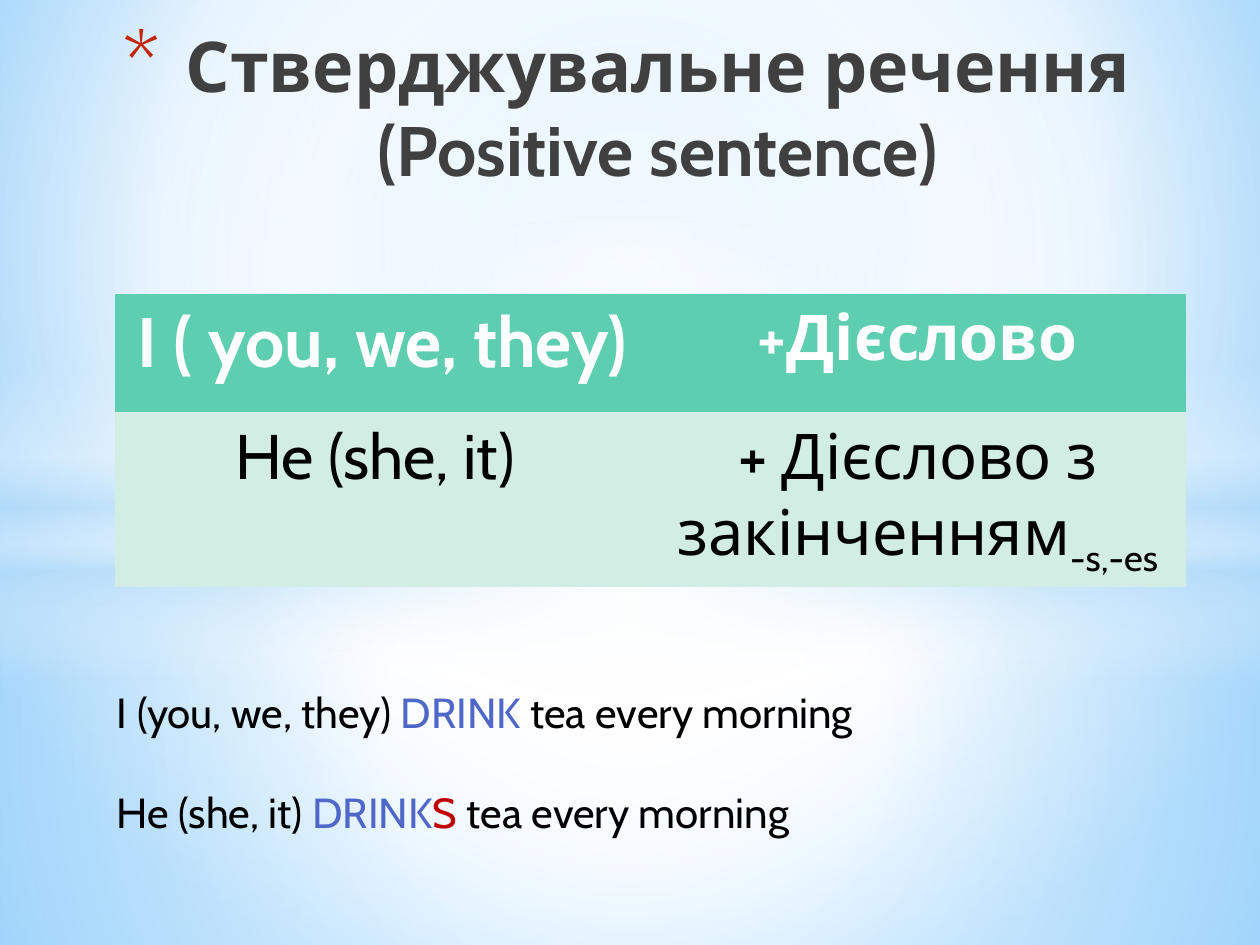
from lxml import etree
from pptx import Presentation
from pptx.dml.color import RGBColor
from pptx.enum.shapes import MSO_SHAPE
from pptx.enum.text import MSO_ANCHOR, MSO_AUTO_SIZE, PP_ALIGN
from pptx.oxml.ns import qn
from pptx.util import Inches, Pt

RECT, OVAL = MSO_SHAPE.RECTANGLE, MSO_SHAPE.OVAL
CENTER, LEFT = PP_ALIGN.CENTER, PP_ALIGN.LEFT
TOP = MSO_ANCHOR.TOP
NO_AUTOFIT = MSO_AUTO_SIZE.NONE
PLAIN_TABLE = "{2D5ABB26-0587-4C30-8999-92F81FD0307C}"
COLS, ROWS = 100, 75
FONT = "Cabin"
COLORS = {
    "white": "FFFFFF", "black": "000000", "grey": "404040", "navy": "212745",
    "sky": "9ED5FF", "deep sky": "5BB9FF", "haze": "B4DCFA",
    "bullet": "C3260C", "verb": "4E67C8", "ending": "C00000",
    "header": "5DCEAF", "row": "D2EDE3",
}


def rgb(name):
    return RGBColor.from_string(COLORS[name])


def child(parent, tag, **attrs):
    el = etree.SubElement(parent, qn(tag))
    for key, value in attrs.items():
        el.set(key, str(value))
    return el


def set_gradient(parent, stops, focus=None):
    """Swap a solid fill for a gradient: circular around focus, else vertical."""
    grad = etree.Element(qn("a:gradFill"), rotWithShape="1")
    gs_list = child(grad, "a:gsLst")
    for pos, color, alpha in stops:
        gs = child(gs_list, "a:gs", pos=pos * 1000)
        clr = child(gs, "a:srgbClr", val=COLORS[color])
        if alpha < 100:
            child(clr, "a:alpha", val=alpha * 1000)
    if focus:
        sides = {side: share * 1000 for side, share in zip("ltrb", focus)}
        child(child(grad, "a:path", path="circle"), "a:fillToRect", **sides)
    else:
        child(grad, "a:lin", ang=90 * 60000, scaled=0)
    parent.replace(parent.find(qn("a:solidFill")), grad)


def add_run(p, text, size=24, color="black", bold=False, baseline=0):
    r = p.add_run()
    r.text = text
    r.font.name, r.font.size, r.font.bold = FONT, Pt(size), bold
    r.font.fill.solid()
    r.font.fill.fore_color.rgb = rgb(color)
    if baseline:
        r.font._element.set("baseline", str(baseline * 1000))
    return r


class Deck:
    def __init__(self):
        self.prs = Presentation()
        self.prs.slide_width, self.prs.slide_height = Inches(10), Inches(7.5)
        self.slide = self.prs.slides.add_slide(self.prs.slide_layouts[0])
        subtitle = self.slide.placeholders[1]._element
        subtitle.getparent().remove(subtitle)

    def place(self, col, row, width, height):
        x, y = self.prs.slide_width / COLS, self.prs.slide_height / ROWS
        return [round(v) for v in (col * x, row * y, width * x, height * y)]

    def background(self, stops, focus):
        fill = self.slide.background.fill
        fill.solid()
        fill.fore_color.rgb = rgb("white")
        bg_pr = self.slide._element.find(".//" + qn("p:bgPr"))
        set_gradient(bg_pr, stops, focus)

    def glow(self, kind, box, stops, focus=None):
        sp = self.slide.shapes.add_shape(kind, *self.place(*box))
        sp.shadow.inherit = False
        sp.line.fill.background()
        sp.fill.solid()
        set_gradient(sp._element.spPr, stops, focus)

    def title(self, text, box, stops):
        sp = self.slide.shapes.title
        sp.left, sp.top, sp.width, sp.height = self.place(*box)
        self.slide.shapes._spTree.append(sp._element)  # in front of the glows
        tf = sp.text_frame
        tf.word_wrap, tf.auto_size, tf.vertical_anchor = True, NO_AUTOFIT, TOP
        p = tf.paragraphs[0]
        p.alignment = CENTER
        r = add_run(p, text, size=40, bold=True)
        set_gradient(r.font._element, stops)
        p_pr = p._p.get_or_add_pPr()
        p_pr.set("marL", str(Inches(0.7)))
        p_pr.set("indent", str(Inches(-0.5)))
        child(child(p_pr, "a:buClr"), "a:srgbClr", val=COLORS["bullet"])
        child(p_pr, "a:buSzPct", val=128000)
        child(p_pr, "a:buFont", typeface=FONT)
        child(p_pr, "a:buChar", char="*")

    def table(self, rows, fills, box):
        frame = self.slide.shapes.add_table(len(rows), len(rows[0]), *self.place(*box))
        table = frame.table
        table.horz_banding = False
        table._tbl.tblPr.find(qn("a:tableStyleId")).text = PLAIN_TABLE
        for i, (row, fill) in enumerate(zip(rows, fills)):
            for j, runs in enumerate(row):
                cell = table.cell(i, j)
                cell.fill.solid()
                cell.fill.fore_color.rgb = rgb(fill)
                p = cell.text_frame.paragraphs[0]
                p.alignment = CENTER
                for text, style in runs:
                    add_run(p, text, **style)

    def text(self, lines, box, gap):
        tf = self.slide.shapes.add_textbox(*self.place(*box)).text_frame
        tf.word_wrap = True
        for i, runs in enumerate(lines):
            p = tf.add_paragraph() if i else tf.paragraphs[0]
            p.alignment = LEFT
            p.space_before = Pt(gap if i else 0)
            for text, color in runs:
                add_run(p, text, color=color)


def main():
    deck = Deck()
    middle = (50, 50, 50, 50)
    deck.background([(0, "sky", 100), (60, "white", 100), (100, "deep sky", 100)],
                    (20, 10, 20, 60))
    deck.glow(RECT, (0, 42.3, COLS, 32.7),
              [(0, "white", 91), (37, "white", 76), (100, "haze", 79)], middle)
    deck.glow(RECT, (0, 0, COLS, 42.3),
              [(0, "white", 89), (48, "white", 62), (100, "haze", 79)], middle)
    deck.glow(RECT, (0, 29, COLS, 25),
              [(0, "white", 0), (29, "white", 30), (45, "haze", 40),
               (55, "white", 26), (65, "haze", 60), (100, "white", 0)])
    deck.glow(OVAL, (0, 17.5, COLS, 55.8),
              [(0, "white", 100), (54, "white", 0)], middle)

    deck.title("Стверджувальне речення (Positive sentence)", (6.7, 1.3, 84, 19.6),
               [(0, "black", 100), (40, "grey", 100), (100, "navy", 65)])

    head = {"color": "white", "bold": True}
    body = {"size": 36}
    deck.table(
        [[[("I ( you, we, they)", {**head, "size": 40})],
          [("+Дієслово", {**head, "size": 36})]],
         [[("He (she, it) ", body)],
          [("+ Дієслово з закінченням", body), ("-s,-es", {**body, "baseline": -25})]]],
        ["header", "row"], (9.1, 23.3, 85, 18.8))

    ending = ("tea every morning", "black")
    deck.text([[("I (you, we, they) ", "black"), ("DRINK ", "verb"), ending],
               [("He (she, it)", "black"), (" DRINK", "verb"), ("S ", "ending"), ending]],
              (8.3, 54, 85.8, 13.1), gap=28)
    deck.prs.save("out.pptx")


if __name__ == "__main__":
    main()
